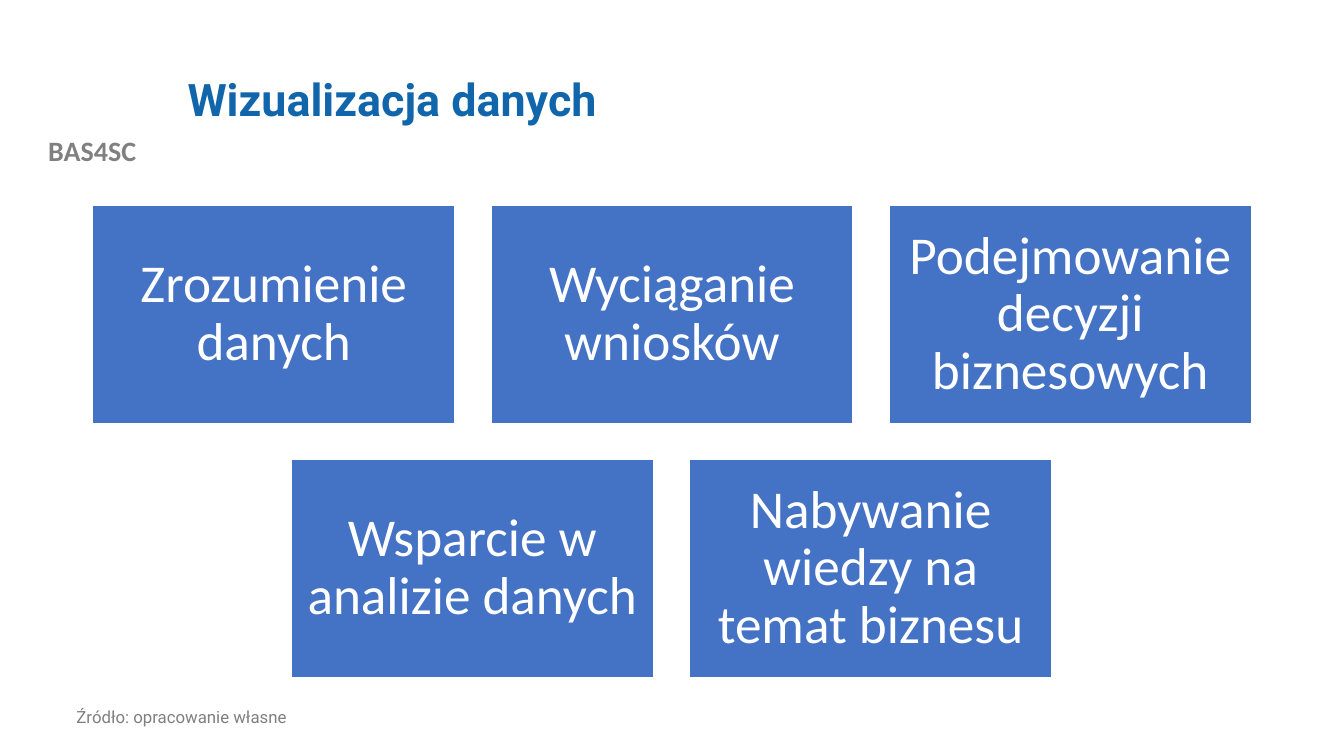
from pptx import Presentation
from pptx.dml.color import RGBColor
from pptx.enum.shapes import MSO_SHAPE
from pptx.enum.text import MSO_ANCHOR, MSO_AUTO_SIZE, PP_ALIGN
from pptx.util import Pt

LEFT, CENTER = PP_ALIGN.LEFT, PP_ALIGN.CENTER
TOP, MIDDLE = MSO_ANCHOR.TOP, MSO_ANCHOR.MIDDLE
RECTANGLE = MSO_SHAPE.RECTANGLE
NO_AUTOFIT = MSO_AUTO_SIZE.NONE

PX = 9144  # EMU per px, 100 px to the inch
SLIDE_W, SLIDE_H = 1333, 750
TITLE_ONLY = 5

COLORS = {
    "title": "1065AB",
    "label": "808080",
    "source": "7F7F7F",
    "tile": "4472C4",
    "white": "FFFFFF",
}

TILE_W, TILE_H, TILE_GAP = 359, 216, 36
TILES_TOP, TILE_INSET = 204, 16
TILE_ROWS = [
    ["Zrozumienie danych", "Wyciąganie wniosków", "Podejmowanie decyzji biznesowych"],
    ["Wsparcie w analizie danych", "Nabywanie wiedzy na temat biznesu"],
]


def px(*lengths):
    return [n * PX for n in lengths]


def write(sp, text, color, align=LEFT, anchor=TOP, spacing=0.9, **font):
    tf = sp.text_frame
    frame_format = {"word_wrap": True, "auto_size": NO_AUTOFIT, "vertical_anchor": anchor}
    for name, value in frame_format.items():
        setattr(tf, name, value)
    p = tf.paragraphs[0]
    p.alignment = align
    p.line_spacing = spacing
    r = p.add_run()
    r.text = text
    for name, value in font.items():
        setattr(r.font, name, value)
    r.font.color.rgb = RGBColor.from_string(COLORS[color])


def add_title(slide, text):
    sp = slide.shapes.title
    sp.left, sp.top, sp.width, sp.height = px(176, 40, 1066, 122)
    write(sp, text, "title", anchor=MIDDLE, name="Roboto", size=Pt(32), bold=True)


def add_text(slide, box, text, color, **text_format):
    write(slide.shapes.add_textbox(*px(*box)), text, color, **text_format)


def add_tile(slide, left, top, text):
    sp = slide.shapes.add_shape(RECTANGLE, *px(left, top, TILE_W, TILE_H))
    sp.shadow.inherit = False
    sp.fill.solid()
    sp.fill.fore_color.rgb = RGBColor.from_string(COLORS["tile"])
    sp.line.color.rgb = RGBColor.from_string(COLORS["white"])
    sp.line.width = Pt(1)
    for side in ("left", "top", "right", "bottom"):
        setattr(sp.text_frame, f"margin_{side}", TILE_INSET * PX)
    write(sp, text, "white", CENTER, MIDDLE, name="Calibri", size=Pt(38))


def add_tile_rows(slide, rows):
    """Stack rows of equal tiles, each row centred on the slide."""
    for i, row in enumerate(rows):
        row_w = len(row) * (TILE_W + TILE_GAP) - TILE_GAP
        left = (SLIDE_W - row_w) // 2
        top = TILES_TOP + i * (TILE_H + TILE_GAP)
        for j, text in enumerate(row):
            add_tile(slide, left + j * (TILE_W + TILE_GAP), top, text)


def main():
    prs = Presentation()
    prs.slide_width, prs.slide_height = px(SLIDE_W, SLIDE_H)
    slide = prs.slides.add_slide(prs.slide_layouts[TITLE_ONLY])
    add_text(slide, (0, 128, 183, 44), "BAS4SC", "label", align=CENTER, spacing=1.0,
             name="Calibri", size=Pt(20), bold=True)
    add_title(slide, "Wizualizacja danych")
    add_text(slide, (66, 698, 501, 37), "Źródło: opracowanie własne", "source",
             name="Roboto", size=Pt(12))
    add_tile_rows(slide, TILE_ROWS)
    prs.save("out.pptx")


if __name__ == "__main__":
    main()
